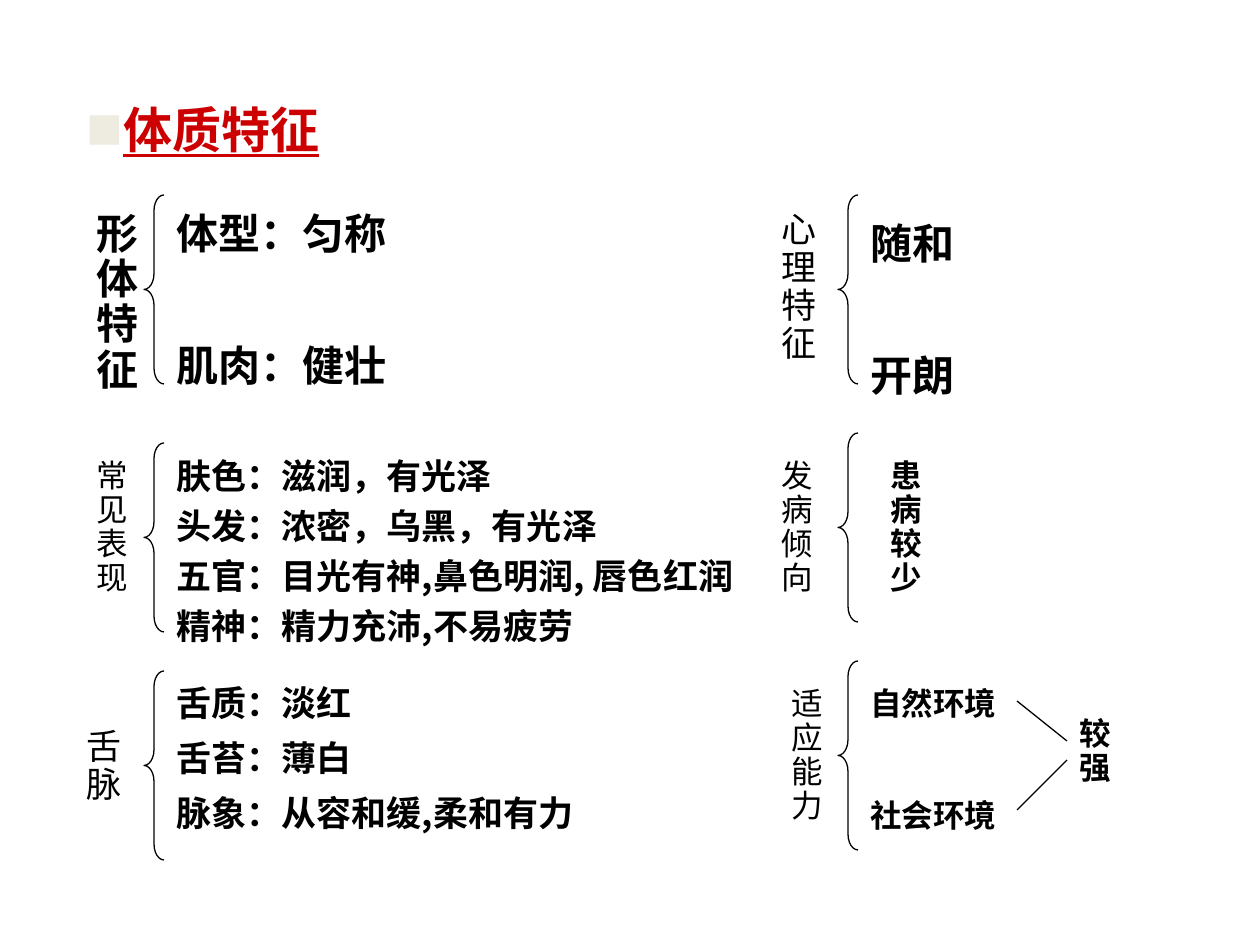
from lxml import etree
from pptx import Presentation
from pptx.dml.color import RGBColor
from pptx.enum.shapes import MSO_CONNECTOR, MSO_SHAPE
from pptx.enum.text import MSO_ANCHOR, MSO_AUTO_SIZE, PP_ALIGN
from pptx.oxml.ns import qn
from pptx.util import Pt

PX = 914400 / 126
FONT = "Noto Sans CJK SC"
BLACK = RGBColor(0x00, 0x00, 0x00)
RED = RGBColor(0xCC, 0x00, 0x00)
BULLET_COLOR = "EEECE1"
BRACE = MSO_SHAPE.LEFT_BRACE
STRAIGHT = MSO_CONNECTOR.STRAIGHT


def px(*values):
    """Turn pixel lengths into EMU."""
    return [round(v * PX) for v in values]


def write(sp, text, size, bold=False, color=BLACK, underline=None,
          spacing=1.08, gap=0):
    """Fill a shape, one paragraph per line; spacing is in ems, gap in points."""
    tf = sp.text_frame
    tf.word_wrap = True
    tf.auto_size = MSO_AUTO_SIZE.NONE
    tf.vertical_anchor = MSO_ANCHOR.TOP
    for i, line in enumerate(text.split("\n")):
        p = tf.add_paragraph() if i else tf.paragraphs[0]
        p.alignment = PP_ALIGN.LEFT
        p.line_spacing = Pt(round(size * spacing, 1))
        p.space_before = Pt(gap if i else 0)
        r = p.add_run()
        r.text = line
        r.font.size = Pt(size)
        r.font.bold = bold
        r.font.underline = underline
        r.font.color.rgb = color
        r.font.name = FONT
        etree.SubElement(r._r.get_or_add_rPr(), qn("a:ea"), typeface=FONT)


prs = Presentation()
prs.slide_width, prs.slide_height = px(1260, 945)
s = prs.slides.add_slide(prs.slide_layouts[5])

# Title with a square bullet
title = s.shapes.title
title.left, title.top, title.width, title.height = px(74, 99, 446, 66)
write(title, "体质特征", 28, bold=True, color=RED, underline=True)
pPr = title.text_frame.paragraphs[0]._p.get_or_add_pPr()
indent = px(28)[0]
pPr.set("marL", str(indent))
pPr.set("indent", str(-indent))
bullet_color = etree.SubElement(pPr, qn("a:buClr"))
etree.SubElement(bullet_color, qn("a:srgbClr"), val=BULLET_COLOR)
etree.SubElement(pPr, qn("a:buSzPct"), val="75000")
etree.SubElement(pPr, qn("a:buFont"), typeface=FONT)
etree.SubElement(pPr, qn("a:buChar"), char="■")

# Labels are narrow boxes that wrap after every character
labels = [
    ("形体特征", 84, 206, 59, 194, 24, True),
    ("常见表现", 84, 454, 49, 149, 18, False),
    ("舌脉", 74, 723, 69, 88, 20, False),
    ("心理特征", 769, 206, 69, 164, 20, False),
    ("发病倾向", 769, 454, 69, 149, 18, False),
    ("适应能力", 779, 682, 59, 149, 18, False),
    ("患病较少", 878, 454, 64, 149, 18, True),
    ("较强", 1067, 712, 69, 81, 18, True),
]
for text, x, y, w, h, size, bold in labels:
    write(s.shapes.add_textbox(*px(x, y, w, h)), text, size, bold=bold)

# Features: text, box, size, line spacing, paragraph gap
features = [
    ("体型：匀称\n肌肉：健壮", 164, 206, 238, 199, 24, 1.08, 50),
    ("肤色：滋润，有光泽\n头发：浓密，乌黑，有光泽\n"
     "五官：目光有神,鼻色明润, 唇色红润\n精神：精力充沛,不易疲劳",
     164, 440, 675, 214, 20, 1.43, 0),
    ("舌质：淡红\n舌苔：薄白\n脉象：从容和缓,柔和有力",
     164, 679, 466, 169, 20, 1.08, 10),
    ("随和\n开朗", 858, 216, 169, 199, 24, 1.08, 50),
    ("自然环境", 858, 682, 169, 47, 18, 1.08, 0),
    ("社会环境", 858, 794, 169, 47, 18, 1.08, 0),
]
for text, x, y, w, h, size, spacing, gap in features:
    write(s.shapes.add_textbox(*px(x, y, w, h)), text, size, bold=True,
          spacing=spacing, gap=gap)

# Braces, one column at a time
for x, tops in ((144, (195, 443, 671)), (838, (195, 433, 661))):
    for y in tops:
        brace = s.shapes.add_shape(BRACE, *px(x, y, 20, 189))
        brace.adjustments[0] = 0.79
        brace.shadow.inherit = False
        brace.fill.background()
        brace.line.color.rgb = BLACK
        brace.line.width = Pt(0.75)

# Both environments lead to the same result
for y1, y2 in ((701, 741), (810, 760)):
    line = s.shapes.add_connector(STRAIGHT, *px(1017, y1, 1067, y2))
    line.line.color.rgb = BLACK
    line.line.width = Pt(0.75)
    etree.SubElement(line._element.spPr, qn("a:effectLst"))

prs.save("out.pptx")
